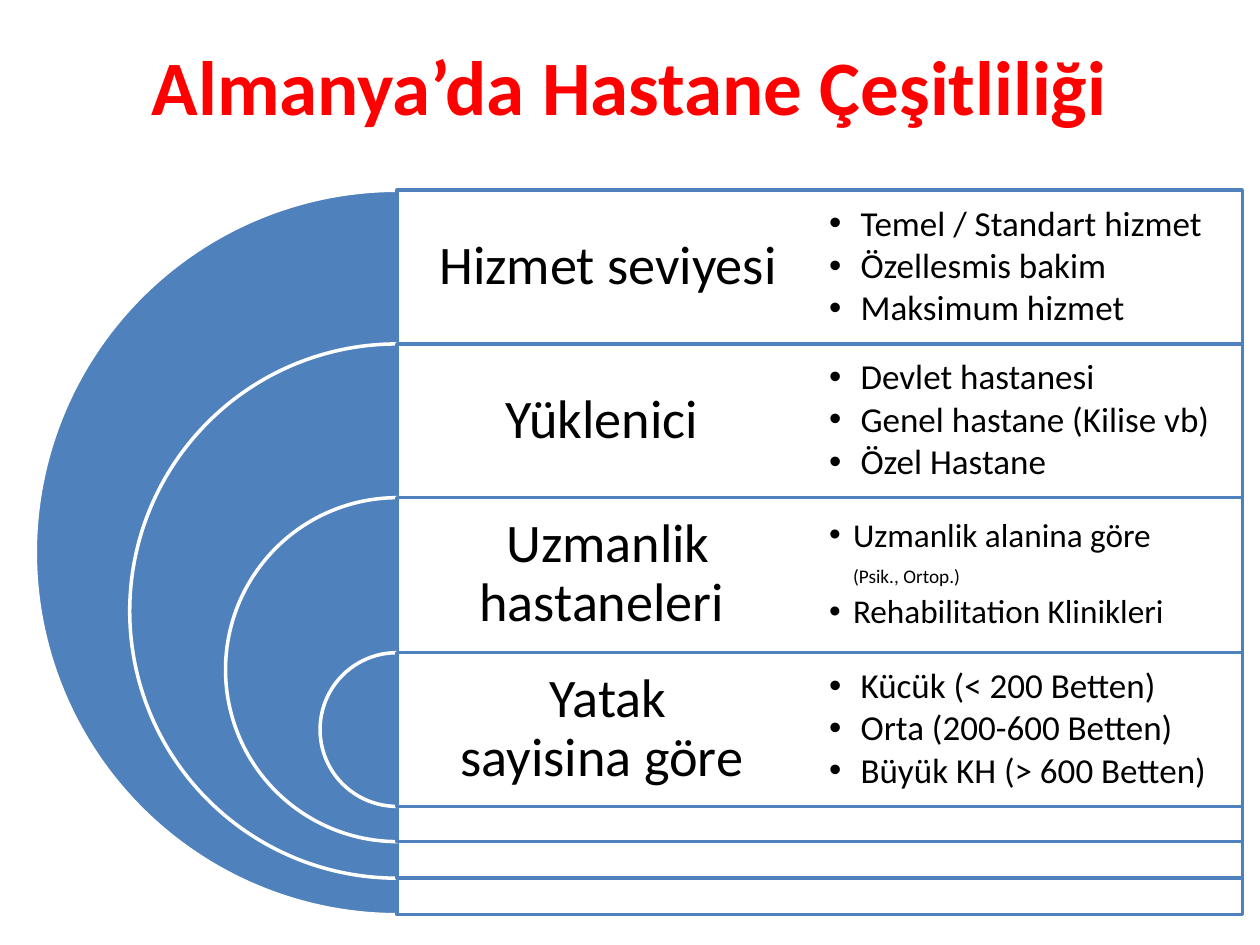
from dataclasses import dataclass
from lxml.etree import SubElement
from pptx import Presentation
from pptx.dml.color import RGBColor
from pptx.enum.shapes import MSO_SHAPE
from pptx.enum.text import MSO_ANCHOR, PP_ALIGN
from pptx.oxml.ns import qn
from pptx.util import Pt

PX = 9144


@dataclass(frozen=True)
class Theme:
    font: str = "Calibri"
    red: RGBColor = RGBColor(0xFF, 0x00, 0x00)
    blue: RGBColor = RGBColor(0x4F, 0x81, 0xBD)
    white: RGBColor = RGBColor(0xFF, 0xFF, 0xFF)
    black: RGBColor = RGBColor(0x00, 0x00, 0x00)
    title: int = 44
    label: int = 31
    item: int = 20
    item_tight: int = 19
    note: int = 11
    line: int = 2


T = Theme()

LEVELS = [
    ("Hizmet seviyesi", 0, T.item, 25,
     [["Temel / Standart hizmet"], ["Özellesmis bakim"], ["Maksimum hizmet"]]),
    ("Yüklenici ", 0, T.item, 25,
     [["Devlet hastanesi"], ["Genel hastane (Kilise vb)"], ["Özel Hastane"]]),
    ("Uzmanlik hastaneleri ", 0, T.item_tight, 19,
     [["Uzmanlik alanina göre\v", "(Psik., Ortop.)", " "], ["Rehabilitation Klinikleri"]]),
    ("Yatak\vsayisina göre ", -80, T.item, 25,
     [["Kücük (< 200 Betten)"], ["Orta (200-600 Betten)"], ["Büyük KH (> 600 Betten)"]]),
]


def emu(*lengths):
    return [n * PX for n in lengths]


def style(font, size, color, bold=False):
    font.name, font.size, font.bold = T.font, Pt(size), bold
    font.color.rgb = color


def add_title(s, box):
    sp = s.shapes.title
    sp.left, sp.top, sp.width, sp.height = emu(*box)
    tf = sp.text_frame
    tf.text = "Almanya’da Hastane Çeşitliliği"
    tf.vertical_anchor = MSO_ANCHOR.MIDDLE
    p = tf.paragraphs[0]
    p.alignment = PP_ALIGN.CENTER
    style(p.runs[0].font, T.title, T.red, True)


def add_filled(s, kind, box, fill, line):
    sp = s.shapes.add_shape(kind, *emu(*box))
    sp.shadow.inherit = False
    sp.fill.solid()
    sp.fill.fore_color.rgb = fill
    sp.line.color.rgb = line
    sp.line.width = Pt(T.line)
    return sp


def add_text_box(s, box, inset):
    tf = s.shapes.add_textbox(*emu(*box)).text_frame
    tf.word_wrap = True
    tf.vertical_anchor = MSO_ANCHOR.MIDDLE
    tf.margin_left = tf.margin_top = tf.margin_right = tf.margin_bottom = inset * PX
    return tf


def add_label(s, box, text, indent):
    tf = add_text_box(s, box, 13)
    tf.text = text
    p = tf.paragraphs[0]
    p.alignment = PP_ALIGN.CENTER
    p.line_spacing = 0.9
    if indent:
        p._p.get_or_add_pPr().set("indent", str(indent * PX))
    for r in p.runs:
        style(r.font, T.label, T.black)


def add_items(s, box, items, size, indent):
    tf = add_text_box(s, box, 8)
    for i, parts in enumerate(items):
        p = tf.add_paragraph() if i else tf.paragraphs[0]
        p.line_spacing = 0.9
        p.space_after = Pt(2.6)
        pPr = p._p.get_or_add_pPr()
        pPr.set("marL", str(indent * PX))
        pPr.set("indent", str(-indent * PX))
        SubElement(pPr, qn("a:buFont")).set("typeface", "Arial")
        SubElement(pPr, qn("a:buChar")).set("char", "•")
        for part in parts:
            r = p.add_run()
            r.text = part.rstrip("\v")
            style(r.font, T.note if part.startswith("(") else size, T.black)
            if part.endswith("\v"):
                p.add_line_break()


def add_target(s, box):
    left, top, width, size = box
    axis = left + size // 2
    panel = left + width - axis
    half = panel // 2
    band = 122
    step = (size - band) // (len(LEVELS) - 1)
    for i, (label, shift, pt, indent, items) in enumerate(LEVELS):
        ring = size - step * i
        y = top + 367 * i // 3
        sp = add_filled(s, MSO_SHAPE.PIE, (axis - ring // 2, y, ring, ring), T.blue, T.white)
        sp.adjustments[0], sp.adjustments[1] = 54, 162
        sp = add_filled(s, MSO_SHAPE.RECTANGLE, (axis, y, panel, ring), T.white, T.blue)
        color = sp.fill._xPr.find(qn("a:solidFill"))[0]
        SubElement(color, qn("a:alpha")).set("val", "90000")
        add_label(s, (axis, y, half, band), label, shift)
        add_items(s, (axis + half, y, half, band), items, pt, indent)


def main():
    prs = Presentation()
    prs.slide_width, prs.slide_height = emu(1000, 750)
    s = prs.slides.add_slide(prs.slide_layouts[5])
    add_title(s, (50, 5, 900, 125))
    add_target(s, (28, 151, 958, 575))
    prs.save("out.pptx")


if __name__ == "__main__":
    main()
